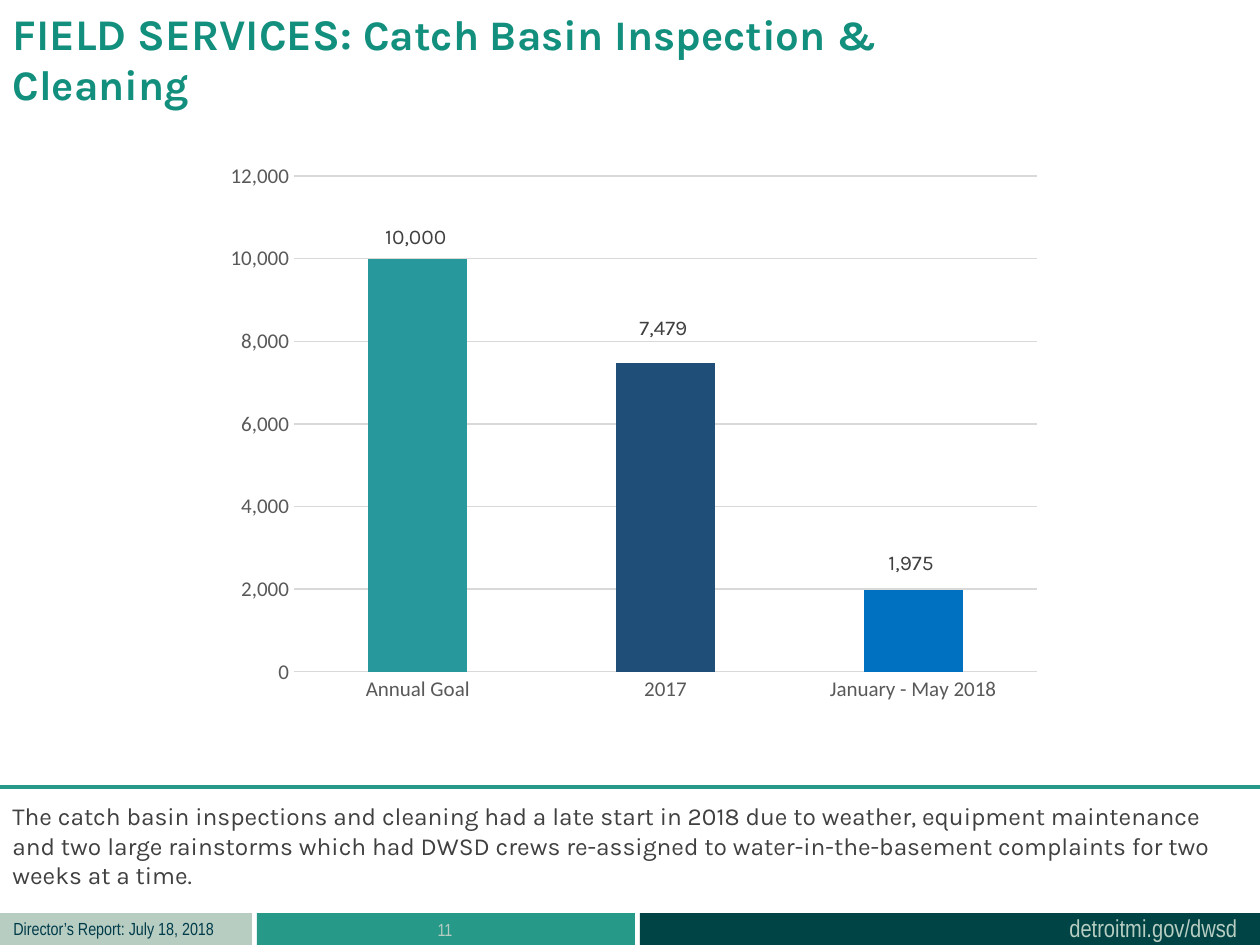
from lxml import etree
from pptx import Presentation
from pptx.chart.data import CategoryChartData
from pptx.dml.color import RGBColor
from pptx.enum.chart import XL_CHART_TYPE, XL_TICK_MARK
from pptx.enum.shapes import MSO_CONNECTOR, MSO_SHAPE
from pptx.enum.text import MSO_ANCHOR, MSO_AUTO_SIZE, PP_ALIGN
from pptx.oxml import parse_xml
from pptx.oxml.ns import nsdecls, qn
from pptx.util import Pt

PX = 914400 // 126
TEAL = RGBColor(0x27, 0x99, 0x89)
DARK_TEAL = RGBColor(0x00, 0x44, 0x45)
SAGE = RGBColor(0xB7, 0xCD, 0xC2)
NAVY = RGBColor(0x00, 0x3B, 0x49)
TITLE_GREEN = RGBColor(0x13, 0x8F, 0x7E)
BODY_GRAY = RGBColor(0x40, 0x40, 0x40)
AXIS_GRAY = RGBColor(0x59, 0x59, 0x59)
GRID_GRAY = RGBColor(0xD9, 0xD9, 0xD9)
BAR_COLORS = [RGBColor(0x27, 0x99, 0x9D), RGBColor(0x1F, 0x4E, 0x79),
              RGBColor(0x00, 0x70, 0xC0)]
STACKED = XL_CHART_TYPE.COLUMN_STACKED
NO_TICK = XL_TICK_MARK.NONE
LEFT, CENTER = PP_ALIGN.LEFT, PP_ALIGN.CENTER


def add_text(box, text, font_name, size, color, align=LEFT, wrap=True):
    left, top, width, height = [n * PX for n in box]
    frame = slide.shapes.add_textbox(left, top, width, height).text_frame
    frame.word_wrap = wrap
    paragraph = frame.paragraphs[0]
    paragraph.text = text
    paragraph.alignment = align
    paragraph.font.name = font_name
    paragraph.font.size = Pt(size)
    paragraph.font.color.rgb = color


def manual_layout(**settings):
    """Return a c:layout element; settings are in schema order."""
    parts = "".join(f'<c:{key} val="{value}"/>' for key, value in settings.items())
    return parse_xml(f'<c:layout {nsdecls("c")}><c:manualLayout>{parts}'
                     '</c:manualLayout></c:layout>')


prs = Presentation()
prs.slide_width = 1260 * PX
prs.slide_height = 945 * PX
slide = prs.slides.add_slide(prs.slide_layouts[5])

# Footer bands
for left, width, color in [(257, 378, TEAL), (640, 620, DARK_TEAL), (0, 252, SAGE)]:
    band = slide.shapes.add_shape(MSO_SHAPE.RECTANGLE, left * PX, 913 * PX,
                                  width * PX, 32 * PX)
    band.shadow.inherit = False
    band.fill.solid()
    band.fill.fore_color.rgb = color
    band.line.fill.background()

add_text((1057, 907, 195, 43), "detroitmi.gov/dwsd", "Arial Narrow", 14, SAGE,
         wrap=False)
add_text((1, 912, 227, 34), "Director’s Report: July 18, 2018", "Arial Narrow", 10,
         NAVY, wrap=False)
add_text((256, 913, 378, 32), "11", "Arial Narrow", 10, SAGE, CENTER)

# Title
title = slide.shapes.title
title.left, title.top, title.width, title.height = 0, 0, 1009 * PX, 97 * PX
heading = title.text_frame
heading.auto_size = MSO_AUTO_SIZE.NONE
heading.vertical_anchor = MSO_ANCHOR.TOP
heading_line = heading.paragraphs[0]
heading_line.alignment = LEFT
heading_line.font.name = "Karla"
heading_line.font.bold = True
heading_line.font.color.rgb = TITLE_GREEN
for text, size in [("FIELD SERVICES: ", 25), ("Catch Basin Inspection & Cleaning", 24)]:
    run = heading_line.add_run()
    run.text = text
    run.font.size = Pt(size)

# Commentary under a rule
add_text((0, 795, 1260, 72),
         "The catch basin inspections and cleaning had a late start in 2018 due to "
         "weather, equipment maintenance and two large rainstorms which had DWSD crews "
         "re-assigned to water-in-the-basement complaints for two weeks at a time.",
         "Karla", 14, BODY_GRAY)
rule = slide.shapes.add_connector(MSO_CONNECTOR.STRAIGHT, 1260 * PX, 787 * PX,
                                  0, 787 * PX)
rule.line.color.rgb = TEAL
rule.line.width = Pt(2.25)
etree.SubElement(rule._element.spPr, qn("a:effectLst"))

# Inspections chart
CHART_WIDTH, CHART_HEIGHT = 840, 559
PLOT_HEIGHT = 496
AXIS_MAX = 12000
inspections = [10000, 7479, 1975]
label_rises = [21, 34, 27]
data = CategoryChartData(number_format="#,##0")
data.categories = ["Annual Goal", "2017", "January - May 2018"]
data.add_series("Series 1", inspections)
chart = slide.shapes.add_chart(STACKED, 214 * PX, 154 * PX, CHART_WIDTH * PX,
                               CHART_HEIGHT * PX, data).chart
chart.has_legend = False
chart.has_title = False
chart.font.name = "Calibri"
chart.font.size = Pt(10)

for axis in (chart.category_axis, chart.value_axis):
    axis.major_tick_mark = axis.minor_tick_mark = NO_TICK
    axis.tick_labels.font.name = "Calibri"
    axis.tick_labels.font.size = Pt(12)
    axis.tick_labels.font.color.rgb = AXIS_GRAY
counts = chart.value_axis
counts.minimum_scale = 0
counts.maximum_scale = AXIS_MAX
counts.major_unit = 2000
counts.tick_labels.number_format = "#,##0"
counts.tick_labels.number_format_is_linked = False
counts.format.line.fill.background()
for line in (chart.category_axis.format.line, counts.major_gridlines.format.line):
    line.color.rgb = GRID_GRAY
    line.width = Pt(0.75)

plot = chart.plots[0]
plot.vary_by_categories = False
plot.gap_width = 150
plot.overlap = 100
bars = plot.series[0]
bars.format.fill.solid()
bars.format.fill.fore_color.rgb = BAR_COLORS[-1]
for index, (value, color, rise) in enumerate(zip(inspections, BAR_COLORS, label_rises)):
    point = bars.points[index]
    point.format.fill.solid()
    point.format.fill.fore_color.rgb = color
    label = point.data_label
    label.font.name = "Karla"
    label.font.size = Pt(12)
    label.font.bold = False
    label.font.color.rgb = BODY_GRAY
    # Lift the label from the middle of its bar to above the top
    lift = (value / AXIS_MAX * PLOT_HEIGHT / 2 + rise) / CHART_HEIGHT
    bar_label = bars._element.xpath(f"c:dLbls/c:dLbl[c:idx/@val='{index}']")[0]
    bar_label.find(qn("c:idx")).addnext(manual_layout(x=-2 / CHART_WIDTH, y=-lift))

# Moved labels get leader lines unless these are switched off
for leader_lines in bars._element.xpath("c:dLbls/c:showLeaderLines"):
    leader_lines.set("val", "0")

plot_area = chart._chartSpace.chart.plotArea
for old_layout in plot_area.findall(qn("c:layout")):
    plot_area.remove(old_layout)
plot_area.insert(0, manual_layout(
    layoutTarget="inner", xMode="edge", yMode="edge", x=80 / CHART_WIDTH,
    y=22 / CHART_HEIGHT, w=743 / CHART_WIDTH, h=PLOT_HEIGHT / CHART_HEIGHT))

prs.save("out.pptx")
